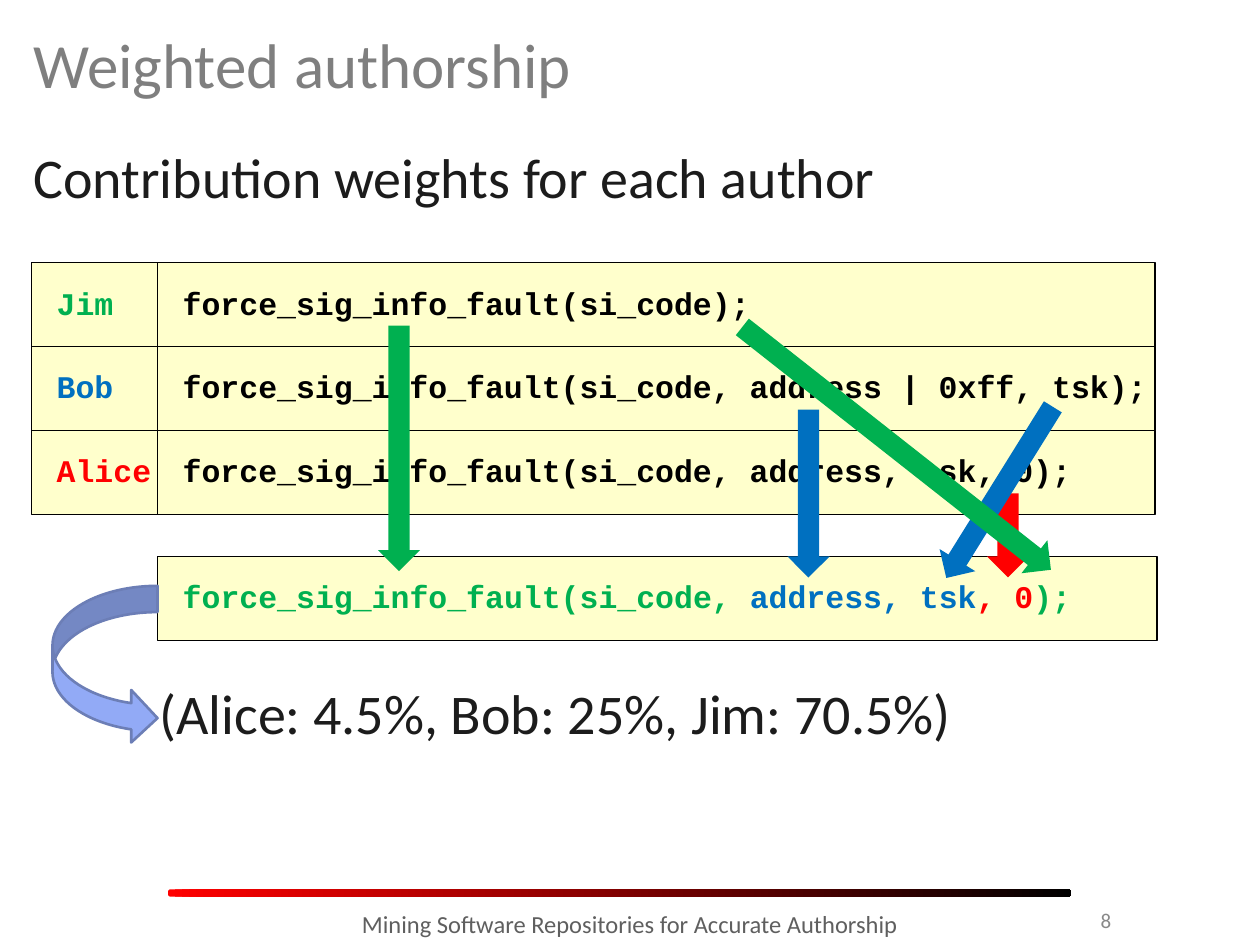
from dataclasses import dataclass
from typing import NamedTuple

from pptx import Presentation
from pptx import util as u
from pptx.dml.color import RGBColor
from pptx.enum import shapes, text

PX = 7620  # EMU per px, 120 px to the inch
MSO = shapes.MSO_SHAPE


@dataclass(frozen=True)
class Theme:
    sans: str = "Calibri"
    mono: str = "Courier New"
    title: str = "7F7F7F"
    body: str = "1C1C1C"
    footer: str = "5F5F5F"
    number: str = "898989"
    code: str = "000000"
    cell: str = "FFFFCC"
    jim: str = "00B050"
    bob: str = "0070C0"
    alice: str = "FF0000"
    curve: str = "92AAF6"
    curve_line: str = "6C7EB6"
    title_pt: int = 36
    body_pt: int = 32
    code_pt: int = 18
    footer_pt: int = 14
    number_pt: int = 12


T = Theme()


class Box(NamedTuple):
    x: int
    y: int
    w: int
    h: int


class Run(NamedTuple):
    words: str
    color: str


class Author(NamedTuple):
    name: str
    color: str
    code: str


class Arrow(NamedTuple):
    box: Box
    color: str
    angle: float = 0


AUTHORS = [
    Author("Jim", T.jim, "force_sig_info_fault(si_code);"),
    Author("Bob", T.bob, "force_sig_info_fault(si_code, address | 0xff, tsk);"),
    Author("Alice", T.alice, "force_sig_info_fault(si_code, address, tsk, 0);"),
]
RESULT = [
    Run("force_sig_info_fault(si_code, ", T.jim),
    Run("address, tsk", T.bob),
    Run(", 0", T.alice),
    Run(");", T.jim),
]
ARROWS = [
    Arrow(Box(940, 470, 40, 80), T.alice),
    Arrow(Box(750, 390, 40, 160), T.bob),
    Arrow(Box(932, 373, 40, 192), T.bob, 31.9),
    Arrow(Box(360, 310, 40, 234), T.jim),
    Arrow(Box(834, 240, 40, 374), T.jim, 308.2),
]


def emu(box: Box) -> list[u.Emu]:
    return [u.Emu(v * PX) for v in box]


def write(tf, runs: list[Run], *, size: int, font: str = T.sans, bold: bool = False,
          align=text.PP_ALIGN.LEFT, anchor=text.MSO_ANCHOR.TOP) -> None:
    tf.word_wrap = True
    tf.vertical_anchor = anchor
    p = tf.paragraphs[0]
    p.alignment = align
    for run in runs:
        r = p.add_run()
        r.text = run.words
        r.font.name, r.font.size, r.font.bold = font, u.Pt(size), bold
        r.font.color.rgb = RGBColor.from_string(run.color)


def add_label(s, box: Box, words: str, color: str, size: int, **fmt) -> None:
    write(s.shapes.add_textbox(*emu(box)).text_frame, [Run(words, color)], size=size, **fmt)


def add_shape(s, kind, box: Box, fill: str, line: str | None = None, line_pt: float = 0.75):
    sp = s.shapes.add_shape(kind, *emu(box))
    sp.shadow.inherit = False
    sp.fill.solid()
    sp.fill.fore_color.rgb = RGBColor.from_string(fill)
    if line:
        sp.line.color.rgb = RGBColor.from_string(line)
        sp.line.width = u.Pt(line_pt)
    else:
        sp.line.fill.background()
    return sp


def add_cell(s, box: Box, runs: list[Run]) -> None:
    tf = add_shape(s, MSO.RECTANGLE, box, T.cell, T.code).text_frame
    tf.margin_left = u.Emu(24 * PX)
    tf.margin_right = 0
    tf.margin_top = tf.margin_bottom = u.Emu(20 * PX)
    write(tf, runs, size=T.code_pt, font=T.mono, bold=True)


def add_footer(s) -> None:
    bar = add_shape(s, MSO.ROUNDED_RECTANGLE, Box(160, 847, 860, 7), T.alice)
    bar.adjustments[0] = 0.33
    bar.fill.gradient()
    bar.fill.gradient_angle = 0
    for stop, color in zip(bar.fill.gradient_stops, (T.alice, T.code)):
        stop.color.rgb = RGBColor.from_string(color)
    add_label(s, Box(910, 852, 160, 48), "8", T.number, T.number_pt,
              align=text.PP_ALIGN.RIGHT, anchor=text.MSO_ANCHOR.MIDDLE)
    add_label(s, Box(290, 860, 620, 48), "Mining Software Repositories for Accurate Authorship",
              T.footer, T.footer_pt, align=text.PP_ALIGN.CENTER)


def main() -> None:
    prs = Presentation()
    prs.slide_width, prs.slide_height = u.Emu(1200 * PX), u.Emu(900 * PX)
    s = prs.slides.add_slide(prs.slide_layouts[6])

    # Footer and headings
    add_footer(s)
    add_label(s, Box(20, 10, 1160, 100), "Weighted authorship", T.title, T.title_pt,
              anchor=text.MSO_ANCHOR.MIDDLE)
    add_label(s, Box(20, 130, 1150, 100), "Contribution weights for each author",
              T.body, T.body_pt)

    # One row per author, then the merged line
    for i, author in enumerate(AUTHORS):
        y = 250 + 80 * i
        add_cell(s, Box(150, y, 950, 80), [Run(author.code, T.code)])
        add_cell(s, Box(30, y, 120, 80), [Run(author.name, author.color)])
    add_cell(s, Box(150, 530, 952, 80), RESULT)

    # Arrows from each contribution to the merged line
    for arrow in ARROWS:
        add_shape(s, MSO.DOWN_ARROW, arrow.box, arrow.color).rotation = arrow.angle

    # Resulting weights
    add_label(s, Box(140, 640, 841, 70), "(Alice: 4.5%, Bob: 25%, Jim: 70.5%)",
              T.body, T.body_pt)
    add_shape(s, MSO.CURVED_RIGHT_ARROW, Box(50, 558, 100, 151), T.curve, T.curve_line, 1.5)

    prs.save("out.pptx")


if __name__ == "__main__":
    main()
